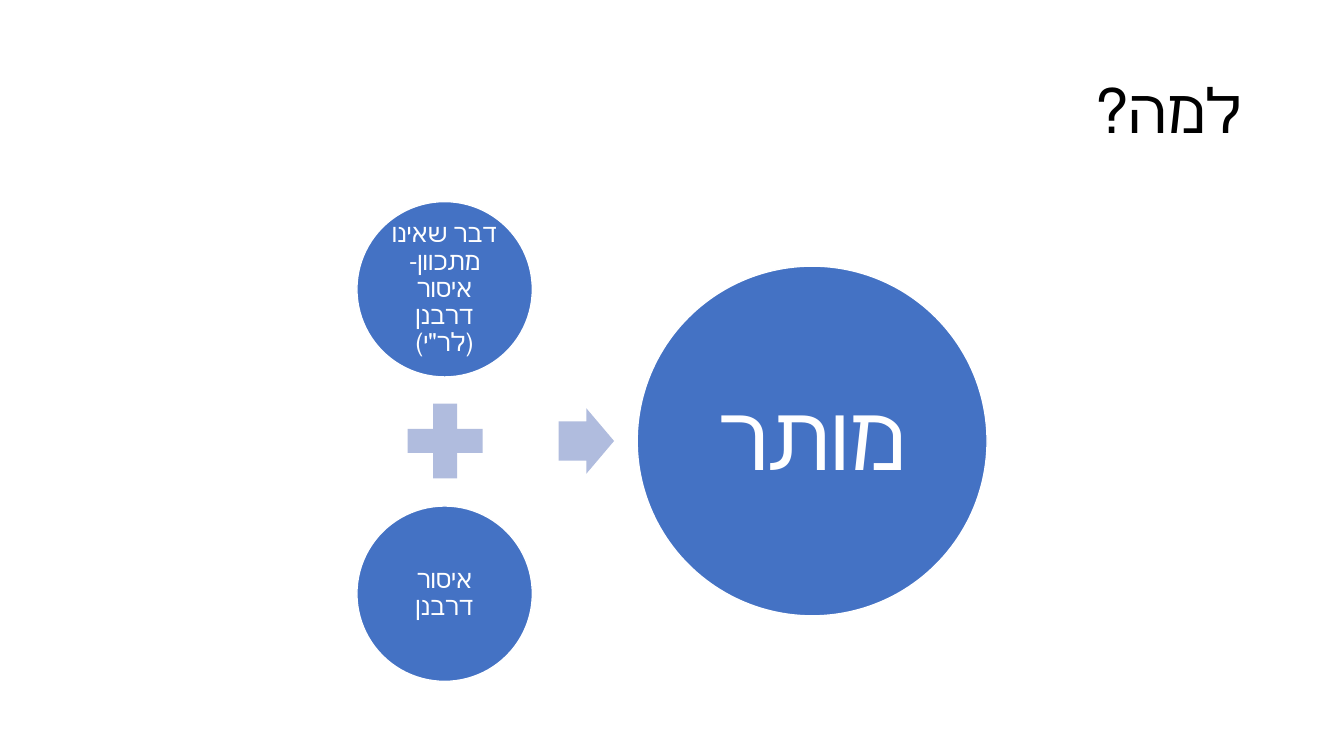
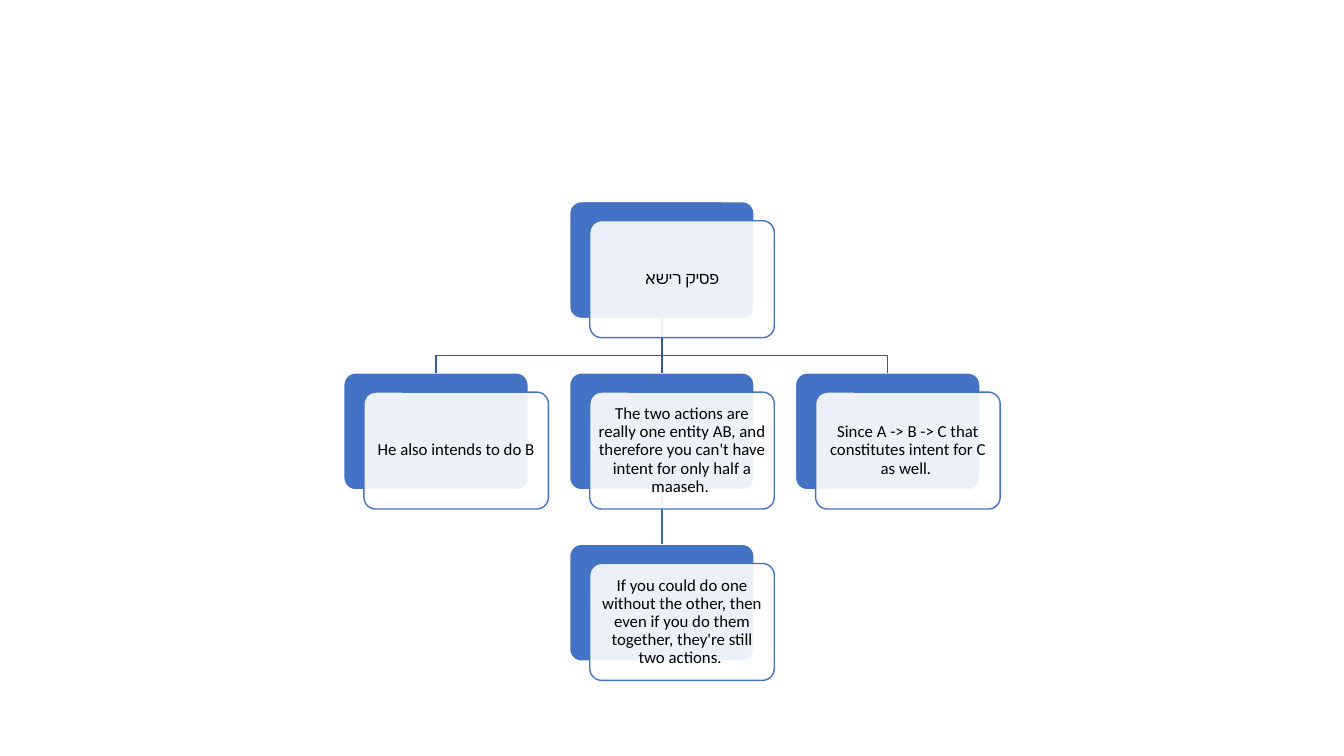
"""Build two slides: an equation of circles and a hierarchy of layered cards."""
from lxml.etree import SubElement
from pptx import Presentation
from pptx.dml.color import RGBColor
from pptx.enum.shapes import MSO_CONNECTOR, MSO_SHAPE
from pptx.enum.text import MSO_ANCHOR, PP_ALIGN
from pptx.oxml.ns import qn
from pptx.util import Inches, Pt

COLORS = {
    "background": "FFFFFF",
    "blue": "4472C4",
    "operator": "B0BCDE",
    "branch": "365B9D",
    "lower_branch": "3E67B2",
    "dark": "000000",
    "light": "FFFFFF",
}
FONT = "Calibri"
CARD_WIDTH, CARD_HEIGHT = 1.83, 1.16
COLUMN_LEFT, COLUMN_STEP = 3.41, 2.24
ROW_TOP, ROW_STEP = 2, 1.7
FRONT_SHIFT_X, FRONT_SHIFT_Y = 0.2, 0.19
BEND_RISE = 0.17
CARDS = {
    "root": (1, 0, "פסיק רישא"),
    "left": (0, 1, "He also intends to do B"),
    "middle": (1, 1, "The two actions are really one entity AB, and therefore "
                     "you can't have intent for only half a maaseh. "),
    "right": (2, 1, "Since A -> B -> C that constitutes intent for C as well. "),
    "reply": (1, 2, "If you could do one without the other, then even if you do "
                    "them together, they're still two actions. "),
}


def rgb(name):
    return RGBColor.from_string(COLORS[name])


def set_all(target, values):
    for name, value in values.items():
        setattr(target, name, value)


def write_text(shape, text, size, color, inset, align=PP_ALIGN.CENTER, rtl=False):
    frame = shape.text_frame
    set_all(frame, {
        "text": text,
        "word_wrap": True,
        "vertical_anchor": MSO_ANCHOR.MIDDLE,
        "margin_left": Inches(inset),
        "margin_right": Inches(inset),
        "margin_top": Inches(inset),
        "margin_bottom": Inches(inset),
    })
    paragraph = frame.paragraphs[0]
    set_all(paragraph, {"alignment": align, "line_spacing": 0.9})
    if rtl:
        paragraph._p.get_or_add_pPr().set("rtl", "1")
    font = paragraph.runs[0].font
    set_all(font, {"size": Pt(size), "name": FONT})
    font.color.rgb = rgb(color)


def add_title(slide, text):
    title = slide.shapes.add_textbox(Inches(0.92), Inches(0.4), Inches(11.5), Inches(1.45))
    write_text(title, text, 44, "dark", 0.1, PP_ALIGN.RIGHT, rtl=True)


def set_line(shape, color):
    shape.line.color.rgb = rgb(color)
    shape.line.width = Pt(1)


def add_figure(slide, kind, left, top, width, height, fill, line=None, adjustments=()):
    shape = slide.shapes.add_shape(
        kind, Inches(left), Inches(top), Inches(width), Inches(height))
    shape.shadow.inherit = False
    shape.fill.solid()
    shape.fill.fore_color.rgb = rgb(fill)
    if line:
        set_line(shape, line)
    else:
        shape.line.fill.background()
    for index, value in enumerate(adjustments):
        shape.adjustments[index] = value
    return shape


def add_circle(slide, left, top, diameter, text, size, inset):
    circle = add_figure(slide, MSO_SHAPE.OVAL, left, top, diameter, diameter, "blue", "light")
    write_text(circle, text, size, "light", inset, rtl=True)


def add_card(slide, column, row, fill, line, shift_x=0, shift_y=0):
    left = COLUMN_LEFT + column * COLUMN_STEP + shift_x
    top = ROW_TOP + row * ROW_STEP + shift_y
    return add_figure(slide, MSO_SHAPE.ROUNDED_RECTANGLE, left, top,
                      CARD_WIDTH, CARD_HEIGHT, fill, line, [0.1])


def add_front(slide, column, row, text):
    front = add_card(slide, column, row, "light", "blue", FRONT_SHIFT_X, FRONT_SHIFT_Y)
    color = front.fill._xPr.find(qn("a:solidFill")).find(qn("a:srgbClr"))
    SubElement(color, qn("a:alpha"), val="90000")
    write_text(front, text, 12, "dark", 0.05)


def add_straight_branch(slide, parent, child, color):
    connector = slide.shapes.add_connector(MSO_CONNECTOR.STRAIGHT, 0, 0, 0, 0)
    connector.begin_connect(parent, 2)
    connector.end_connect(child, 0)
    set_line(connector, color)
    SubElement(connector._element.spPr, qn("a:effectLst"))


def add_bent_branch(slide, parent, child):
    start_x = parent.left + parent.width // 2
    end_x = child.left + child.width // 2
    bend_y = child.top - Inches(BEND_RISE)
    builder = slide.shapes.build_freeform(start_x, parent.top + parent.height)
    builder.add_line_segments(
        [(start_x, bend_y), (end_x, bend_y), (end_x, child.top)], close=False)
    branch = builder.convert_to_shape()
    branch.shadow.inherit = False
    branch.fill.background()
    set_line(branch, "branch")


def add_slide(presentation):
    slide = presentation.slides.add_slide(presentation.slide_layouts[6])
    slide.background.fill.solid()
    slide.background.fill.fore_color.rgb = rgb("background")
    return slide


def build_equation(presentation):
    slide = add_slide(presentation)
    add_title(slide, "למה?")
    add_circle(slide, 3.54, 2, 1.74, "דבר שאינו מתכוון- איסור דרבנן (לר\"י)", 18, 0.03)
    add_figure(slide, MSO_SHAPE.MATH_PLUS, 3.91, 3.87, 1.01, 1.01, "operator")
    add_circle(slide, 3.54, 5.02, 1.74, "איסור דרבנן", 18, 0.03)
    add_figure(slide, MSO_SHAPE.RIGHT_ARROW, 5.54, 4.05, 0.55, 0.65, "operator",
               adjustments=[0.6, 0.5])
    add_circle(slide, 6.32, 2.64, 3.47, "מותר", 65, 0.09)


def build_hierarchy(presentation):
    slide = add_slide(presentation)
    backs = {name: add_card(slide, column, row, "blue", "light")
             for name, (column, row, _) in CARDS.items()}
    for side in ("left", "right"):
        add_bent_branch(slide, backs["root"], backs[side])
    add_straight_branch(slide, backs["root"], backs["middle"], "branch")
    add_straight_branch(slide, backs["middle"], backs["reply"], "lower_branch")
    for column, row, text in CARDS.values():
        add_front(slide, column, row, text)


def main():
    presentation = Presentation()
    set_all(presentation, {"slide_width": Inches(13.33), "slide_height": Inches(7.5)})
    build_equation(presentation)
    build_hierarchy(presentation)
    presentation.save("out.pptx")


if __name__ == "__main__":
    main()
